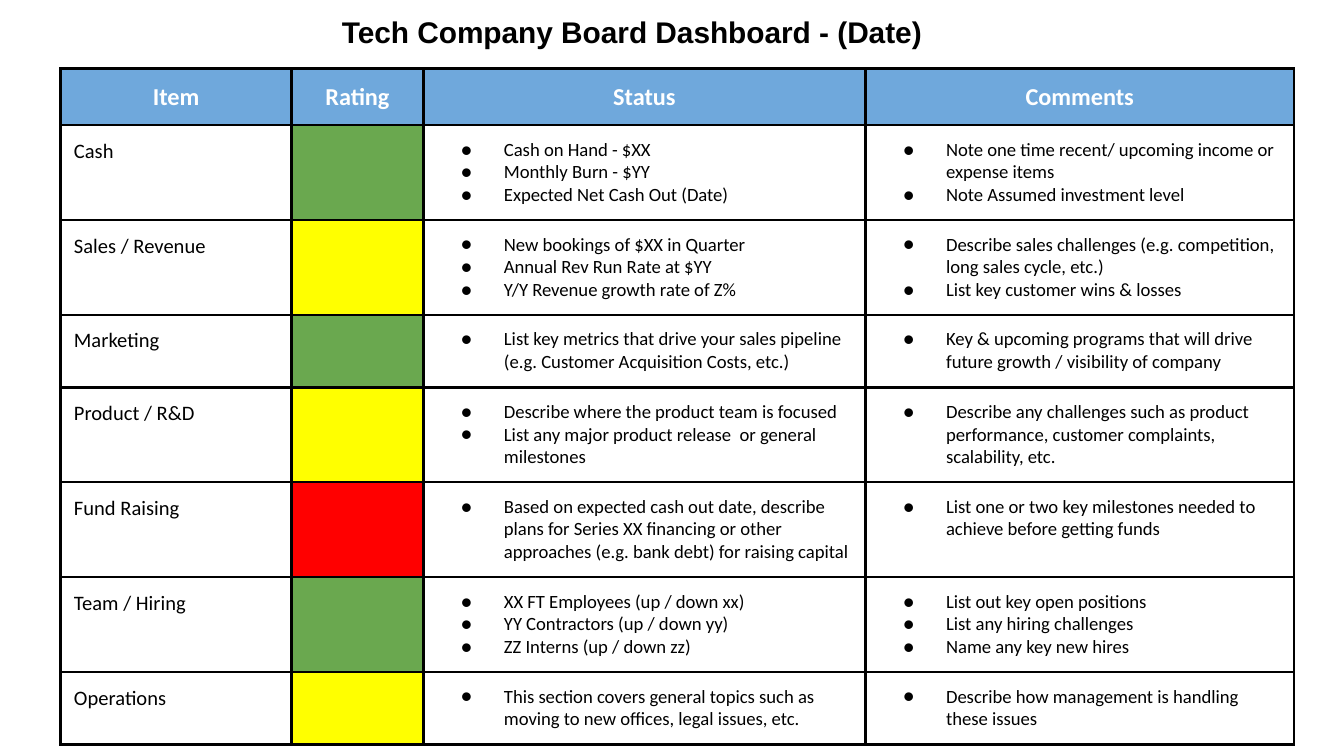
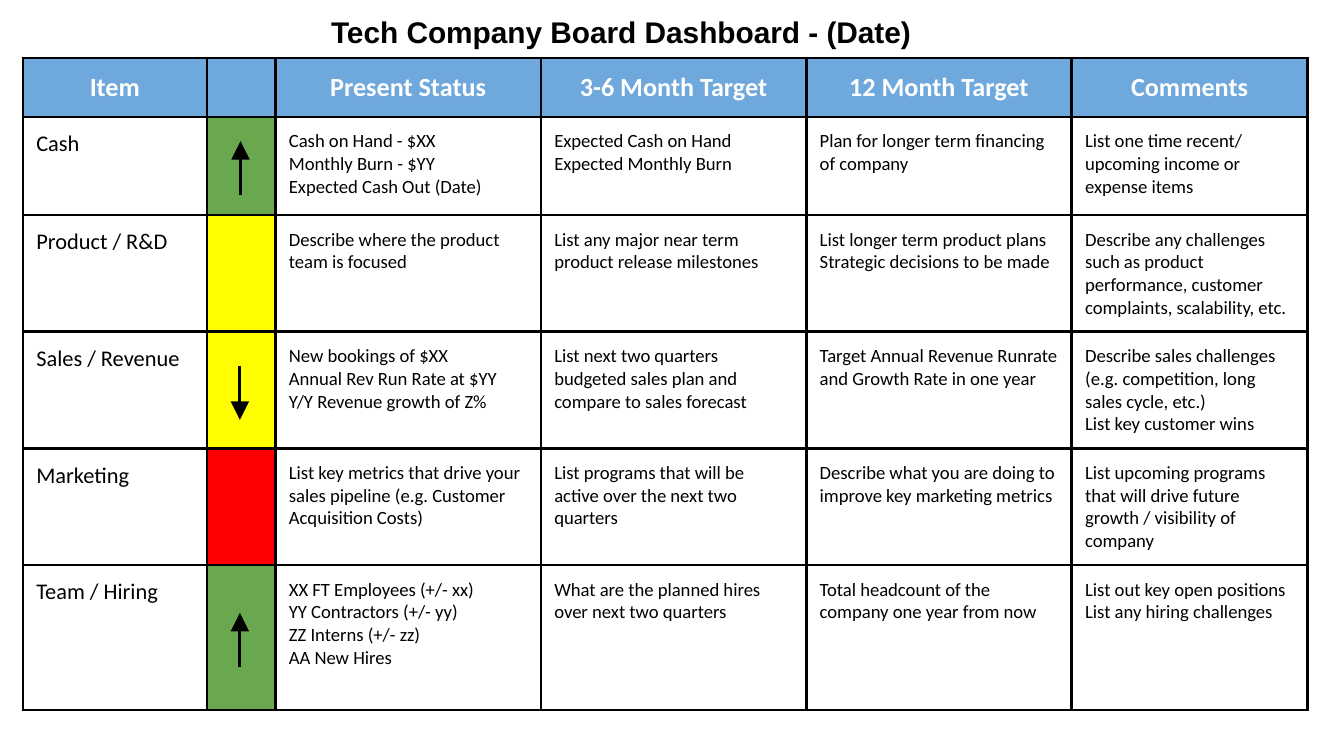
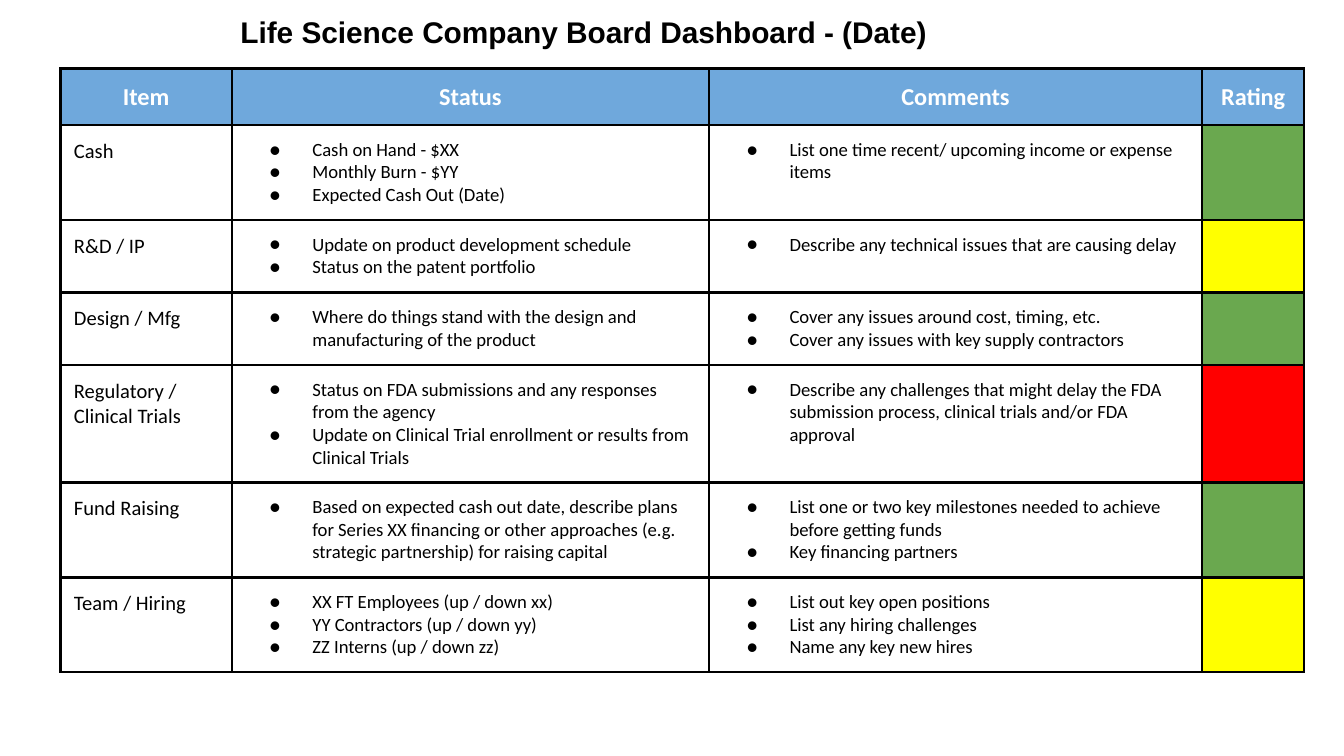
from lxml.etree import SubElement
from pptx import Presentation
from pptx.dml.color import RGBColor
from pptx.enum.shapes import MSO_CONNECTOR
from pptx.enum.text import PP_ALIGN
from pptx.oxml.ns import qn
from pptx.util import Pt

EMU_PER_PX = 4572
SLIDE_WIDTH, SLIDE_HEIGHT = 2000, 1125
COLORS = {
    "black": "000000",
    "white": "FFFFFF",
    "header": "6FA8DC",
    "green": "6AA84F",
    "yellow": "FFFF00",
    "red": "FF0000",
}
TITLE_FORMAT = {"name": "Arial", "size": 16, "bold": True, "color": "black"}
BODY_FORMAT = {"name": "Calibri", "size": 10, "bold": False, "color": "black"}
CELL_MARGIN = 20
BULLET_LEFT, BULLET_HANG = 100, 64
LINE_WIDTH = 1.5

TECH_TITLE = "Tech Company Board Dashboard - (Date)"
HIRING_STATUS = ["XX FT Employees (up / down xx)", "YY Contractors (up / down yy)", "ZZ Interns (up / down zz)"]
HIRING_COMMENTS = ["List out key open positions", "List any hiring challenges", "Name any key new hires"]

TECH_RATING = {
    "title": TECH_TITLE,
    "title_box": (489, 0, 978, 100),
    "origin": (90, 102),
    "columns": [344, 196, 658, 638],
    "rows": [68, 128, 108, 108, 108, 136, 136, 108],
    "header_size": 13,
    "item_size": 11,
    "rating_column": 1,
    "bulleted": True,
    "arrows": [],
    "cells": [
        ["Item", "Rating", "Status", "Comments"],
        ["Cash", "green",
         ["Cash on Hand - $XX", "Monthly Burn - $YY", "Expected Net Cash Out (Date)"],
         ["Note one time recent/ upcoming income or expense items", "Note Assumed investment level"]],
        ["Sales / Revenue", "yellow",
         ["New bookings of $XX in Quarter", "Annual Rev Run Rate at $YY", "Y/Y Revenue growth rate of Z%"],
         ["Describe sales challenges (e.g. competition, long sales cycle, etc.)",
          "List key customer wins & losses"]],
        ["Marketing", "green",
         "List key metrics that drive your sales pipeline (e.g. Customer Acquisition Costs, etc.)",
         "Key & upcoming programs that will drive future growth / visibility of company"],
        ["Product / R&D", "yellow",
         ["Describe where the product team is focused", "List any major product release  or general milestones"],
         "Describe any challenges such as product performance, customer complaints, scalability, etc."],
        ["Fund Raising", "red",
         "Based on expected cash out date, describe plans for Series XX financing or other approaches "
         "(e.g. bank debt) for raising capital",
         "List one or two key milestones needed to achieve before getting funds"],
        ["Team / Hiring", "green", HIRING_STATUS, HIRING_COMMENTS],
        ["Operations", "yellow",
         "This section covers general topics such as moving to new offices, legal issues, etc.",
         "Describe how management is handling these issues"],
    ],
}

TECH_TARGETS = {
    "title": TECH_TITLE,
    "title_box": (473, 0, 988, 100),
    "origin": (34, 86),
    "columns": [274, 102, 395, 395, 395, 351],
    "rows": [88, 146, 110, 110, 110, 216],
    "header_size": 14,
    "item_size": 12,
    "rating_column": 1,
    "bulleted": False,
    "arrows": [(358, 290, 210), (357, 545, 625), (357, 992, 912)],
    "cells": [
        ["Item", "", "Present Status", "3-6 Month Target", "12 Month Target", "Comments"],
        ["Cash", "green",
         ["Cash on Hand - $XX", "Monthly Burn - $YY", "Expected Cash Out (Date)"],
         ["Expected Cash on Hand", "Expected Monthly Burn"],
         "Plan for longer term financing of company",
         "List one time recent/ upcoming income or expense items"],
        ["Product / R&D", "yellow",
         "Describe where the product team is focused",
         "List any major near term product release milestones",
         ["List longer term product plans", "Strategic decisions to be made"],
         "Describe any challenges such as product performance, customer complaints, scalability, etc."],
        ["Sales / Revenue", "yellow",
         ["New bookings of $XX", "Annual Rev Run Rate at $YY", "Y/Y Revenue growth of Z%"],
         "List next two quarters budgeted sales plan and compare to sales forecast",
         "Target Annual Revenue Runrate and Growth Rate in one year",
         ["Describe sales challenges (e.g. competition, long sales cycle, etc.)", "List key customer wins"]],
        ["Marketing", "red",
         "List key metrics that drive your sales pipeline (e.g. Customer Acquisition Costs)",
         "List programs that will be active over the next two quarters",
         "Describe what you are doing to improve key marketing metrics",
         "List upcoming programs that will drive future growth / visibility of company"],
        ["Team / Hiring", "green",
         ["XX FT Employees (+/- xx)", "YY Contractors (+/- yy)", "ZZ Interns (+/- zz)", "AA New Hires"],
         "What are the planned hires over next two quarters",
         "Total headcount of the company one year from now",
         HIRING_COMMENTS[:2]],
    ],
}

LIFE_SCIENCE = {
    "title": "Life Science Company Board Dashboard - (Date)",
    "title_box": (338, 0, 1130, 100),
    "origin": (90, 102),
    "columns": [255, 710, 734, 152],
    "rows": [68, 128, 108, 108, 108, 102, 108],
    "header_size": 13,
    "item_size": 11,
    "rating_column": 3,
    "bulleted": True,
    "arrows": [],
    "cells": [
        ["Item", "Status", "Comments", "Rating"],
        ["Cash",
         ["Cash on Hand - $XX", "Monthly Burn - $YY", "Expected Cash Out (Date)"],
         "List one time recent/ upcoming income or expense items", "green"],
        ["R&D / IP",
         ["Update on product development schedule", "Status on the patent portfolio"],
         "Describe any technical issues that are causing delay", "yellow"],
        ["Design / Mfg",
         "Where do things stand with the design and manufacturing of the product",
         ["Cover any issues around cost, timing, etc.", "Cover any issues with key supply contractors"], "green"],
        ["Regulatory / Clinical Trials",
         ["Status on FDA submissions and any responses from the agency",
          "Update on Clinical Trial enrollment or results from Clinical Trials"],
         "Describe any challenges that might delay the FDA submission process, clinical trials and/or FDA approval",
         "red"],
        ["Fund Raising",
         "Based on expected cash out date, describe plans for Series XX financing or other approaches "
         "(e.g. strategic partnership) for raising capital",
         ["List one or two key milestones needed to achieve before getting funds", "Key financing partners"],
         "green"],
        ["Team / Hiring", HIRING_STATUS, HIRING_COMMENTS, "yellow"],
    ],
}


def px(length):
    return length * EMU_PER_PX


def rgb(name):
    return RGBColor.from_string(COLORS[name])


def set_margins(target):
    for side in ("left", "top", "right", "bottom"):
        setattr(target, f"margin_{side}", px(CELL_MARGIN))


def format_font(font, values):
    for attribute, value in values.items():
        if attribute == "color":
            font.color.rgb = rgb(value)
        else:
            setattr(font, attribute, Pt(value) if attribute == "size" else value)


def add_bullet(paragraph, values):
    properties = paragraph._p.get_or_add_pPr()
    properties.set("marL", str(px(BULLET_LEFT)))
    properties.set("indent", str(-px(BULLET_HANG)))
    color = SubElement(properties, qn("a:buClr"))
    SubElement(color, qn("a:srgbClr"), val=COLORS[values["color"]])
    SubElement(properties, qn("a:buSzPts"), val=str(values["size"] * 100))
    SubElement(properties, qn("a:buFont"), typeface=values["name"])
    SubElement(properties, qn("a:buChar"), char="●")


def write_text(text_frame, texts, values, alignment=PP_ALIGN.LEFT, bulleted=False):
    for index, text in enumerate([texts] if isinstance(texts, str) else texts):
        paragraph = text_frame.add_paragraph() if index else text_frame.paragraphs[0]
        paragraph.alignment = alignment
        if not text:
            SubElement(paragraph._p, qn("a:endParaRPr"), sz=str(values["size"] * 100))
            continue
        run = paragraph.add_run()
        run.text = text
        format_font(run.font, values)
        if bulleted:
            add_bullet(paragraph, values)


def add_borders(cell):
    properties = cell._tc.get_or_add_tcPr()
    for side in ("lnL", "lnR", "lnT", "lnB"):
        border = SubElement(properties, qn(f"a:{side}"), w=str(Pt(LINE_WIDTH)))
        fill = SubElement(border, qn("a:solidFill"))
        SubElement(fill, qn("a:srgbClr"), val=COLORS["black"])


def fill_cell(cell, color=None):
    if color:
        cell.fill.solid()
        cell.fill.fore_color.rgb = rgb(color)
    else:
        cell.fill.background()


def write_cell(cell, content, row, column, dashboard):
    set_margins(cell)
    add_borders(cell)
    if row == 0:
        fill_cell(cell, "header")
        header_format = BODY_FORMAT | {"size": dashboard["header_size"], "bold": True, "color": "white"}
        write_text(cell.text_frame, content, header_format, PP_ALIGN.CENTER)
    elif column == dashboard["rating_column"]:
        fill_cell(cell, content)
        write_text(cell.text_frame, "", BODY_FORMAT)
    elif column == 0:
        fill_cell(cell)
        write_text(cell.text_frame, content, BODY_FORMAT | {"size": dashboard["item_size"]})
    else:
        fill_cell(cell)
        write_text(cell.text_frame, content, BODY_FORMAT, bulleted=dashboard["bulleted"])


def add_dashboard_table(slide, dashboard):
    left, top = dashboard["origin"]
    columns, rows = dashboard["columns"], dashboard["rows"]
    table = slide.shapes.add_table(
        len(rows), len(columns), px(left), px(top), px(sum(columns)), px(sum(rows))
    ).table
    table.first_row = False
    table.horz_banding = False
    for column, width in zip(table.columns, columns):
        column.width = px(width)
    for row, height in zip(table.rows, rows):
        row.height = px(height)
    for row, contents in enumerate(dashboard["cells"]):
        for column, content in enumerate(contents):
            write_cell(table.cell(row, column), content, row, column, dashboard)


def add_title(slide, text, box):
    shape = slide.shapes.add_textbox(*map(px, box))
    shape.text_frame.word_wrap = True
    set_margins(shape.text_frame)
    write_text(shape.text_frame, text, TITLE_FORMAT)


def add_trend_arrow(slide, x, start, end):
    arrow = slide.shapes.add_connector(MSO_CONNECTOR.STRAIGHT, px(x), px(start), px(x), px(end))
    arrow.line.color.rgb = rgb("black")
    arrow.line.width = Pt(LINE_WIDTH)
    SubElement(arrow.line._get_or_add_ln(), qn("a:tailEnd"), type="triangle", w="lg", len="lg")
    SubElement(arrow._element.spPr, qn("a:effectLst"))


def add_dashboard(presentation, dashboard):
    slide = presentation.slides.add_slide(presentation.slide_layouts[6])
    add_dashboard_table(slide, dashboard)
    add_title(slide, dashboard["title"], dashboard["title_box"])
    for arrow in dashboard["arrows"]:
        add_trend_arrow(slide, *arrow)


def main():
    presentation = Presentation()
    presentation.slide_width = px(SLIDE_WIDTH)
    presentation.slide_height = px(SLIDE_HEIGHT)
    for dashboard in (TECH_RATING, TECH_TARGETS, LIFE_SCIENCE):
        add_dashboard(presentation, dashboard)
    presentation.save("out.pptx")


if __name__ == "__main__":
    main()
